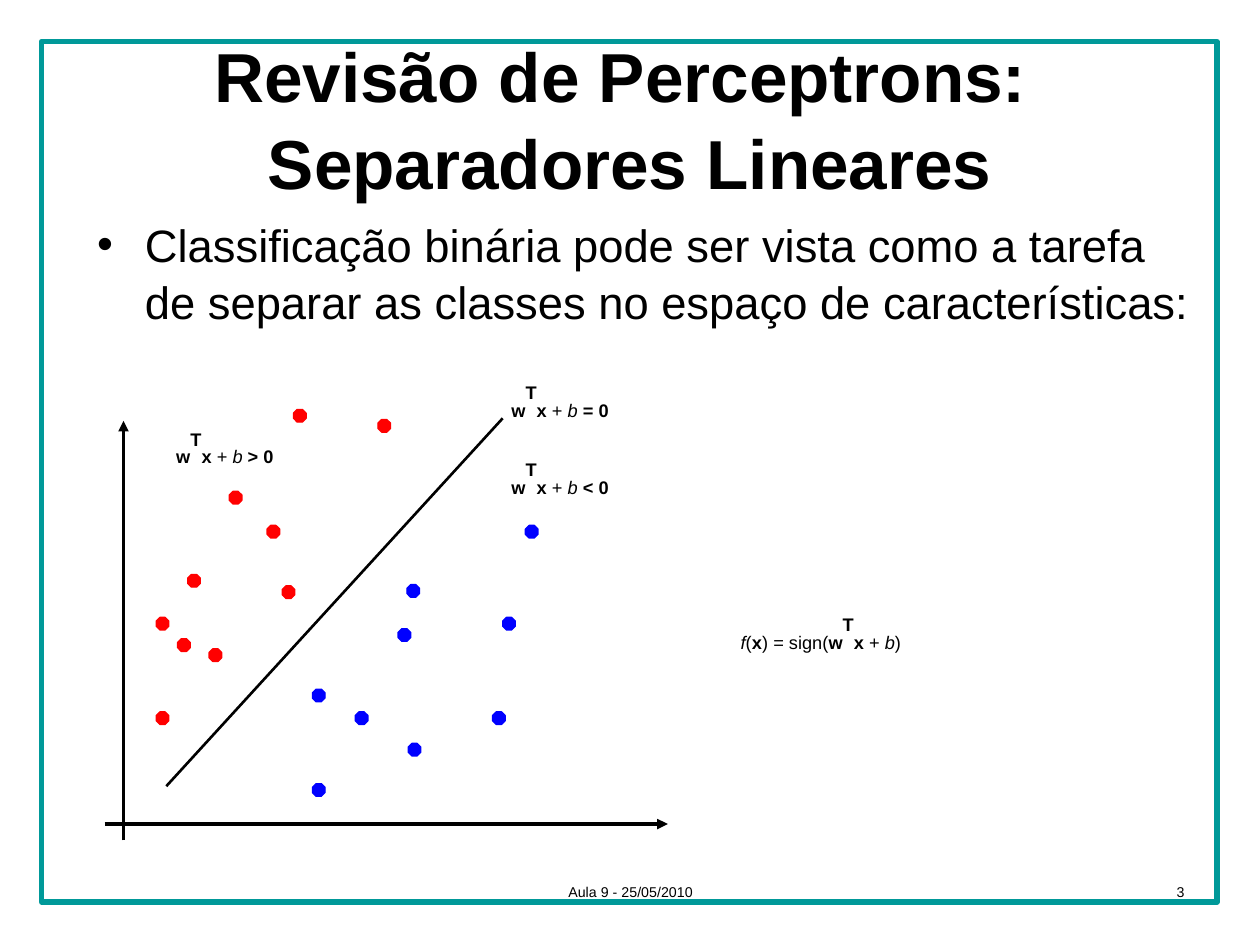
from dataclasses import dataclass

from lxml import etree
from pptx import Presentation
from pptx.dml.color import RGBColor
from pptx.enum.shapes import MSO_CONNECTOR, MSO_SHAPE
from pptx.enum.text import MSO_ANCHOR, MSO_AUTO_SIZE, PP_ALIGN
from pptx.oxml.ns import qn
from pptx.util import Inches, Pt

RECTANGLE, OCTAGON = MSO_SHAPE.RECTANGLE, MSO_SHAPE.OCTAGON
STRAIGHT = MSO_CONNECTOR.STRAIGHT
CENTER, RIGHT, LEFT = PP_ALIGN.CENTER, PP_ALIGN.RIGHT, PP_ALIGN.LEFT
TOP, MIDDLE = MSO_ANCHOR.TOP, MSO_ANCHOR.MIDDLE
NO_FIT, GROW = MSO_AUTO_SIZE.NONE, MSO_AUTO_SIZE.SHAPE_TO_FIT_TEXT
SUB, SUPER = -25, 30


@dataclass(frozen=True)
class Theme:
    font: str = "Arial"
    text: RGBColor = RGBColor(0, 0, 0)
    frame: RGBColor = RGBColor(0x00, 0x99, 0x99)
    positive: RGBColor = RGBColor(0xFF, 0, 0)
    negative: RGBColor = RGBColor(0, 0, 0xFF)
    title_size: float = 39.6
    body_size: float = 25.9
    formula_size: float = 18
    footer_size: float = 14


THEME = Theme()

# Dot positions are relative to the top left of the plot.
PLOT_BOX = (0.83, 3.25, 4.47, 3.42)
POSITIVE_DOTS = [
    (1.29, 0.92), (0.66, 1.31), (0.83, 1.9), (0.41, 2.4), (0.99, 0.65),
    (0.41, 1.65), (0.58, 1.82), (1.41, 1.4), (1.5, 0), (2.17, 0.08),
]
NEGATIVE_DOTS = [
    (2.4, 1.39), (1.99, 2.4), (3.08, 2.4), (1.65, 2.97), (2.33, 1.74),
    (1.65, 2.22), (2.41, 2.65), (3.16, 1.65), (3.34, 0.92),
]

# Each formula part is (text, style letters, baseline shift).
LINEAR_FORM = [("w", "b", SUB), ("T", "b", SUPER), ("x ", "b", SUB),
               ("+ ", "", SUB), ("b", "i", SUB)]
DECISION = [("f", "i", SUB), ("(", "", SUB), ("x", "b", SUB), (")", "", SUB),
            (" = ", "i", SUB), ("sign(", "", SUB), *LINEAR_FORM, (")", "", SUB)]


def inches(box):
    return [Inches(value) for value in box]


def set_attributes(target, values):
    for name, value in values.items():
        setattr(target, name, value)


def style_font(font, size, bold=False, italic=False):
    set_attributes(font, {"name": THEME.font, "size": Pt(size),
                          "bold": bold, "italic": italic})
    font.color.rgb = THEME.text


def add_frame(slide, box):
    frame = slide.shapes.add_shape(RECTANGLE, *inches(box))
    frame.shadow.inherit = False
    frame.fill.background()
    frame.line.color.rgb = THEME.frame
    frame.line.width = Pt(3)


def fill_placeholder(placeholder, box, text, size, bold, anchor, align):
    left, top, width, height = inches(box)
    set_attributes(placeholder, {"left": left, "top": top,
                                 "width": width, "height": height})
    frame = placeholder.text_frame
    set_attributes(frame, {"text": text, "vertical_anchor": anchor,
                           "word_wrap": True, "auto_size": NO_FIT})
    paragraph = frame.paragraphs[0]
    set_attributes(paragraph, {"alignment": align, "line_spacing": 1.05})
    for run in paragraph.runs:
        style_font(run.font, size, bold)
    return paragraph


def add_title(slide, box):
    fill_placeholder(slide.shapes.title, box,
                     "Revisão de Perceptrons: \vSeparadores Lineares",
                     THEME.title_size, True, MIDDLE, CENTER)


def add_body(slide, box):
    paragraph = fill_placeholder(
        slide.placeholders[1], box,
        "Classificação binária pode ser vista como a tarefa de separar "
        "as classes no espaço de características:",
        THEME.body_size, False, TOP, LEFT)
    properties = paragraph._p.get_or_add_pPr()
    properties.set("marL", str(Inches(0.38)))
    properties.set("indent", str(Inches(-0.38)))
    etree.SubElement(properties, qn("a:buChar")).set("char", "•")


def add_line(slide, start, end, width, arrow=False):
    line = slide.shapes.add_connector(STRAIGHT, *inches(start + end))
    line.line.color.rgb = THEME.text
    line.line.width = Pt(width)
    if arrow:
        outline = line.line._get_or_add_ln()
        etree.SubElement(outline, qn("a:tailEnd")).set("type", "triangle")
    etree.SubElement(line._element.spPr, qn("a:effectLst"))


def add_dots(slide, origin, offsets, color):
    for dx, dy in offsets:
        dot = slide.shapes.add_shape(
            OCTAGON, *inches((origin[0] + dx, origin[1] + dy, 0.1, 0.1)))
        dot.shadow.inherit = False
        dot.fill.solid()
        dot.fill.fore_color.rgb = color
        dot.line.color.rgb = color
        dot.line.width = Pt(0.75)


def add_plot(slide, box):
    """Draw the axes, the separating line and both classes of dots."""
    left, top, width, height = box
    right, bottom = left + width, top + height
    axis_x, axis_y = left + 0.15, bottom - 0.13
    add_line(slide, (axis_x, bottom), (axis_x, top + 0.09), 2, arrow=True)
    add_line(slide, (left, axis_y), (right, axis_y), 2, arrow=True)
    add_line(slide, (left + 0.49, top + 2.99), (left + 3.16, top + 0.07), 1.5)
    add_dots(slide, (left, top), POSITIVE_DOTS, THEME.positive)
    add_dots(slide, (left, top), NEGATIVE_DOTS, THEME.negative)


def add_text(slide, box, parts, size, align=LEFT, before=0, fit=NO_FIT):
    frame = slide.shapes.add_textbox(*inches(box)).text_frame
    set_attributes(frame, {"word_wrap": True, "auto_size": fit})
    paragraph = frame.paragraphs[0]
    set_attributes(paragraph, {"alignment": align, "space_before": Pt(before)})
    for text, style, shift in parts:
        run = paragraph.add_run()
        run.text = text
        style_font(run.font, size, "b" in style, "i" in style)
        run.font._element.set("baseline", str(shift * 1000))


def add_formula(slide, box, parts):
    add_text(slide, box, parts, THEME.formula_size,
             before=THEME.formula_size / 2, fit=GROW)


def add_footer(slide, top, height):
    add_text(slide, (7.17, top, 2.33, height), [("3", "", SUB)],
             THEME.footer_size, RIGHT)
    add_text(slide, (3.42, top, 3.17, height),
             [("Aula 9 - 25/05/2010", "", SUB)], THEME.footer_size, CENTER)


def main():
    presentation = Presentation()
    set_attributes(presentation, {"slide_width": Inches(10),
                                  "slide_height": Inches(7.5)})
    slide = presentation.slides.add_slide(presentation.slide_layouts[1])
    add_frame(slide, (0.33, 0.33, 9.33, 6.83))
    add_title(slide, (0.5, 0.3, 9, 1.25))
    add_body(slide, (0.67, 1.65, 9, 1.19))
    add_plot(slide, PLOT_BOX)
    for left, top, relation in [(3.96, 2.95, "="), (3.96, 3.56, "<"),
                                (1.3, 3.32, ">")]:
        add_formula(slide, (left, top, 2.92, 0.5),
                    [*LINEAR_FORM, (f" {relation} 0", "b", SUB)])
    add_formula(slide, (5.78, 4.79, 3.21, 0.5), DECISION)
    add_footer(slide, 6.83, 0.52)
    presentation.save("out.pptx")


if __name__ == "__main__":
    main()
